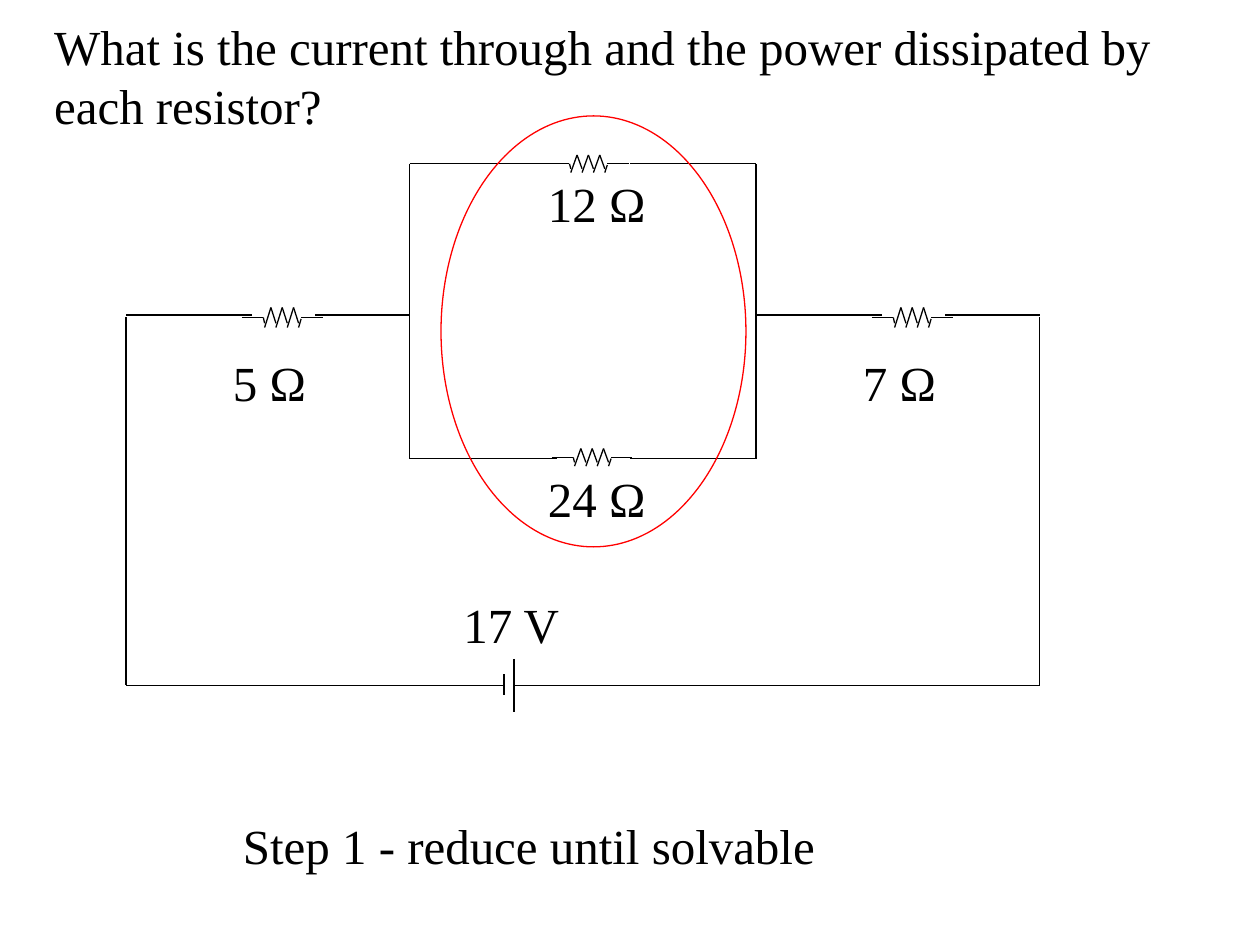
"""Draw a resistor circuit problem with its parallel pair circled."""
from dataclasses import dataclass
from typing import NamedTuple

from lxml import etree
from pptx import Presentation
from pptx.dml.color import RGBColor
from pptx.enum import shapes, text
from pptx.oxml import ns
from pptx.util import Inches, Pt


@dataclass(frozen=True)
class Theme:
    ink: RGBColor = RGBColor(0, 0, 0)
    highlight: RGBColor = RGBColor(255, 0, 0)
    font: str = "Times New Roman"
    size: int = 28
    stroke: float = 0.75


class Wire(NamedTuple):
    x1: float
    y1: float
    x2: float
    y2: float


class Label(NamedTuple):
    words: str
    left: float
    top: float
    width: float


class Resistor(NamedTuple):
    left: float
    axis: float
    stretch: float = 1


THEME = Theme()
LEFT, RIGHT, BRANCH_IN, BRANCH_OUT = 1, 8.25, 3.25, 6
TOP, MIDDLE, LOW, BOTTOM = 1.3, 2.5, 3.64, 5.44
SIDE_TOP, CELL_MINUS, CELL_PLUS = 2.52, 4, 4.08
LABEL_HEIGHT = 0.57

WIRES = [
    Wire(BRANCH_OUT, TOP, BRANCH_OUT, LOW),
    Wire(BRANCH_IN, TOP, BRANCH_IN, LOW),
    Wire(BRANCH_IN, TOP, 4.41, TOP),
    Wire(5, TOP, BRANCH_OUT, TOP),
    Wire(BRANCH_IN, LOW, 4.42, LOW),
    Wire(5, LOW, BRANCH_OUT, LOW),
    Wire(LEFT, MIDDLE, 2, MIDDLE),
    Wire(2.5, MIDDLE, BRANCH_IN, MIDDLE),
    Wire(BRANCH_OUT, MIDDLE, 7, MIDDLE),
    Wire(7.5, MIDDLE, RIGHT, MIDDLE),
    Wire(LEFT, SIDE_TOP, LEFT, BOTTOM),
    Wire(RIGHT, SIDE_TOP, RIGHT, BOTTOM),
    Wire(LEFT, BOTTOM, CELL_MINUS, BOTTOM),
    Wire(CELL_MINUS, 5.35, CELL_MINUS, 5.52),
    Wire(CELL_PLUS, 5.23, CELL_PLUS, 5.65),
    Wire(CELL_PLUS, BOTTOM, RIGHT, BOTTOM),
]
RESISTORS = [
    Resistor(4.35, TOP),
    Resistor(4.38, 3.63),
    Resistor(1.92, SIDE_TOP, 1.14),
    Resistor(6.92, SIDE_TOP, 1.14),
]
LABELS = [
    Label("5 Ω", 1.75, 2.75, 0.79),
    Label("7 Ω", 6.75, 2.75, 0.79),
    Label("12 Ω", 4.25, 1.33, 0.99),
    Label("24 Ω", 4.25, 3.67, 0.99),
    Label("17 V", 3.58, 4.67, 0.97),
    Label("Step 1 - reduce until solvable", 1.83, 6.42, 4.74),
]


def resistor_strokes() -> list[Wire]:
    """Give the leads and teeth of a resistor relative to its left end."""
    strokes = [
        Wire(0, 0, 0.17, 0),
        Wire(0.17, 0, 0.18, 0.04),
        Wire(0.47, 0.01, 0.45, 0.07),
        Wire(0.47, 0, 0.64, 0),
    ]
    for tooth in range(3):
        shift = 0.09 * tooth
        strokes += [
            Wire(0.18 + shift, 0.07, 0.23 + shift, -0.07),
            Wire(0.23 + shift, -0.07, 0.27 + shift, 0.04),
        ]
    return strokes


def draw_wire(canvas, wire: Wire) -> None:
    """Draw one thin straight wire without a shadow."""
    line = canvas.add_connector(
        shapes.MSO_CONNECTOR.STRAIGHT, *(Inches(length) for length in wire)
    )
    line.line.color.rgb = THEME.ink
    line.line.width = Pt(THEME.stroke)
    etree.SubElement(line._element.spPr, ns.qn("a:effectLst"))


def draw_resistor(canvas, resistor: Resistor) -> None:
    """Draw one resistor symbol as a group of strokes."""
    symbol = canvas.add_group_shape().shapes
    left, axis, stretch = resistor
    for x1, y1, x2, y2 in resistor_strokes():
        draw_wire(
            symbol,
            Wire(left + x1, axis + y1 * stretch, left + x2, axis + y2 * stretch),
        )


def write(holder, words: str, *, wrap: bool = False) -> None:
    """Put left-aligned text in a shape using the theme type."""
    frame = holder.text_frame
    frame.text = words
    frame.word_wrap = wrap
    frame.auto_size = text.MSO_AUTO_SIZE.SHAPE_TO_FIT_TEXT
    frame.vertical_anchor = text.MSO_ANCHOR.TOP
    paragraph = frame.paragraphs[0]
    paragraph.alignment = text.PP_ALIGN.LEFT
    paragraph.font.name = THEME.font
    paragraph.font.size = Pt(THEME.size)
    paragraph.font.color.rgb = THEME.ink


def draw_label(canvas, label: Label) -> None:
    """Place one label on the slide."""
    box = canvas.add_textbox(
        Inches(label.left), Inches(label.top), Inches(label.width), Inches(LABEL_HEIGHT)
    )
    write(box, label.words)


def circle_pair(canvas) -> None:
    """Circle the two parallel resistors."""
    ring = canvas.add_shape(
        shapes.MSO_SHAPE.OVAL, Inches(3.5), Inches(0.92), Inches(2.42), Inches(3.42)
    )
    ring.shadow.inherit = False
    ring.fill.background()
    ring.line.color.rgb = THEME.highlight
    ring.line.width = Pt(THEME.stroke)


def main() -> None:
    """Build and save the slide."""
    deck = Presentation()
    deck.slide_width, deck.slide_height = Inches(10), Inches(7.5)
    slide = deck.slides.add_slide(deck.slide_layouts.get_by_name("Title Only"))
    question = slide.shapes.title
    question.left, question.top = Inches(0.33), Inches(0.08)
    question.width, question.height = Inches(9.33), Inches(1.03)
    write(
        question,
        "What is the current through and the power dissipated by each resistor?",
        wrap=True,
    )
    for wire in WIRES:
        draw_wire(slide.shapes, wire)
    for resistor in RESISTORS:
        draw_resistor(slide.shapes, resistor)
    for label in LABELS:
        draw_label(slide.shapes, label)
    circle_pair(slide.shapes)
    deck.save("out.pptx")


if __name__ == "__main__":
    main()
